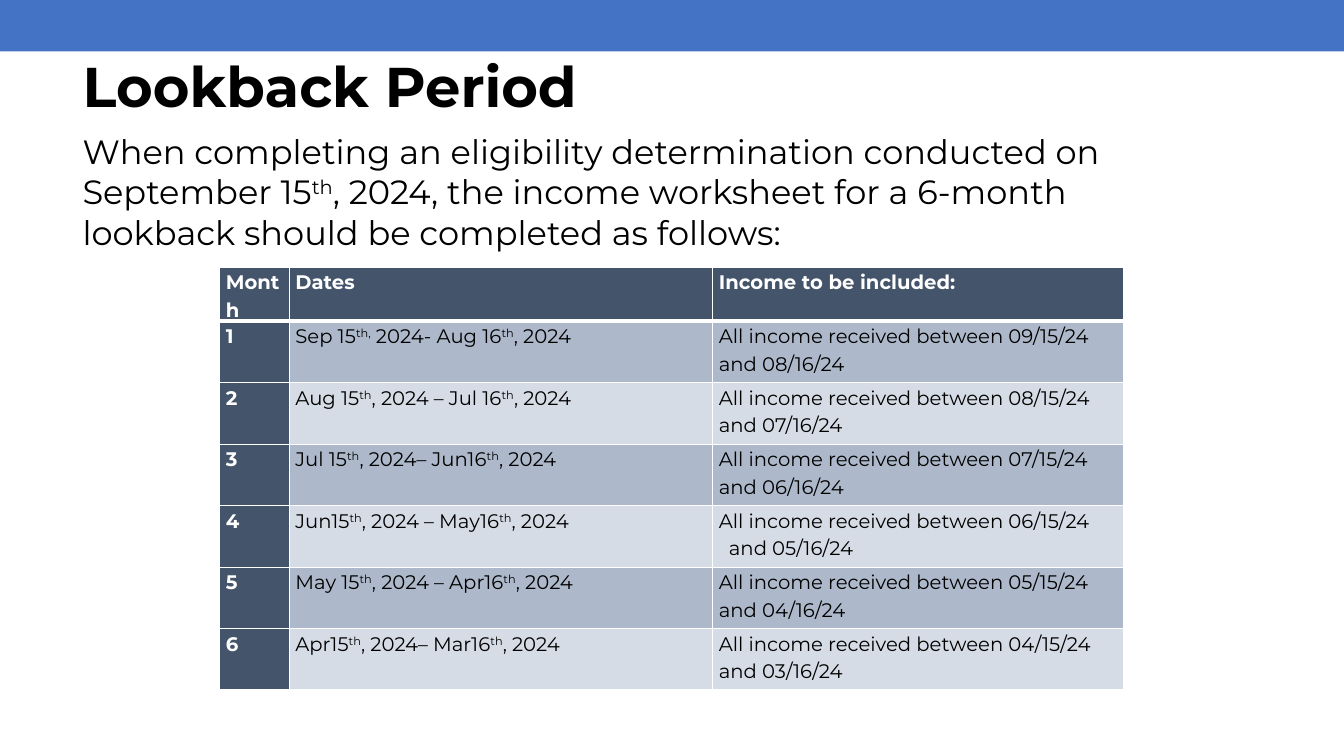
from typing import NamedTuple

from lxml.etree import SubElement
from pptx import Presentation
from pptx.dml.color import RGBColor
from pptx.enum.shapes import MSO_SHAPE
from pptx.enum.text import MSO_ANCHOR, MSO_AUTO_SIZE, PP_ALIGN
from pptx.oxml.ns import qn
from pptx.util import Inches, Pt

BLUE = RGBColor(0x44, 0x72, 0xC4)
SLATE = RGBColor(0x44, 0x54, 0x6A)
BANDS = (RGBColor(0xAD, 0xB9, 0xCA), RGBColor(0xD6, 0xDC, 0xE5))
WHITE = RGBColor(0xFF, 0xFF, 0xFF)
BLACK = RGBColor(0, 0, 0)
FONT = "Montserrat"
COL_WIDTHS = (0.69, 4.2, 4.07)
HEADER_HEIGHT, ROW_HEIGHT = 0.31, 0.61


class Month(NamedTuple):
    dates: str  # text between carets is superscript
    start: str
    end: str
    split: bool = False  # end date in its own indented paragraph


HEADERS = ("Month", "Dates", "Income to be included:")
MONTHS = (
    Month("Sep 15^th,^ 2024- Aug 16^th^, 2024", "09/15/24", "08/16/24"),
    Month("Aug 15^th^, 2024 – Jul 16^th^, 2024", "08/15/24", "07/16/24"),
    Month("Jul 15^th^, 2024– Jun16^th^, 2024", "07/15/24", "06/16/24"),
    Month("Jun15^th^, 2024 – May16^th^, 2024", "06/15/24", "05/16/24", True),
    Month("May 15^th^, 2024 – Apr16^th^, 2024", "05/15/24", "04/16/24"),
    Month("Apr15^th^, 2024– Mar16^th^, 2024", "04/15/24", "03/16/24"),
)


def write(tf, text: str, *, size: float, color: RGBColor = BLACK, bold: bool = False,
          spacing: float = 1.0, indent: float = 0) -> None:
    """Fill a text frame; later lines become paragraphs indented by `indent` inches."""
    for i, line in enumerate(text.split("\n")):
        p = tf.add_paragraph() if i else tf.paragraphs[0]
        p.alignment = PP_ALIGN.LEFT
        p.line_spacing = spacing
        if i and indent:
            p._p.get_or_add_pPr().set("marL", str(Inches(indent)))
        for j, part in enumerate(line.split("^")):
            r = p.add_run()
            r.text = part
            r.font.name, r.font.size, r.font.bold = FONT, Pt(size), bold
            r.font.color.rgb = color
            if j % 2:
                r._r.get_or_add_rPr().set("baseline", "30000")


def fill_cell(cell, text: str, fill: RGBColor, *, strong: bool, bottom: float = 1) -> None:
    tc_pr = cell._tc.get_or_add_tcPr()
    for side, width in (("L", 1), ("R", 1), ("T", 1), ("B", bottom)):
        ln = SubElement(tc_pr, qn(f"a:ln{side}"), w=str(Pt(width)))
        SubElement(SubElement(ln, qn("a:solidFill")), qn("a:srgbClr"), val=str(WHITE))
    cell.fill.solid()
    cell.fill.fore_color.rgb = fill
    cell.margin_left = cell.margin_right = Inches(0.06)
    cell.margin_top = cell.margin_bottom = 0
    write(cell.text_frame, text, size=14, color=WHITE if strong else BLACK,
          bold=strong, spacing=1.15, indent=0.1)


def add_months(s) -> None:
    height = HEADER_HEIGHT + ROW_HEIGHT * len(MONTHS)
    table = s.shapes.add_table(len(MONTHS) + 1, len(HEADERS), Inches(2.18), Inches(2.65),
                               Inches(sum(COL_WIDTHS)), Inches(height)).table
    for col, width in zip(table.columns, COL_WIDTHS):
        col.width = Inches(width)
    for i, row in enumerate(table.rows):
        row.height = Inches(ROW_HEIGHT if i else HEADER_HEIGHT)
    for c, header in enumerate(HEADERS):
        fill_cell(table.cell(0, c), header, SLATE, strong=True, bottom=3)
    for i, month in enumerate(MONTHS, 1):
        gap = "\n" if month.split else " "
        income = f"All income received between {month.start}{gap}and {month.end}"
        band = BANDS[(i - 1) % 2]
        fill_cell(table.cell(i, 0), str(i), SLATE, strong=True)
        fill_cell(table.cell(i, 1), month.dates, band, strong=False)
        fill_cell(table.cell(i, 2), income, band, strong=False)


def main() -> None:
    prs = Presentation()
    prs.slide_width, prs.slide_height = Inches(13.33), Inches(7.5)
    s = prs.slides.add_slide(prs.slide_layouts[5])

    # Top bar
    bar = s.shapes.add_shape(MSO_SHAPE.RECTANGLE, 0, Inches(-0.01), Inches(13.33), Inches(0.52))
    bar.shadow.inherit = False
    bar.fill.solid()
    bar.fill.fore_color.rgb = BLUE
    bar.line.fill.background()

    # Title
    title = s.shapes.title
    title.left, title.top = Inches(0.72), Inches(0.46)
    title.width, title.height = Inches(9.85), Inches(0.86)
    tf = title.text_frame
    tf.auto_size = MSO_AUTO_SIZE.NONE
    tf.vertical_anchor = MSO_ANCHOR.MIDDLE
    write(tf, "Lookback Period", size=40, bold=True, spacing=0.9)

    # Introduction
    intro = s.shapes.add_textbox(Inches(0.72), Inches(1.25), Inches(10.42), Inches(0.86))
    intro.text_frame.word_wrap = True
    write(intro.text_frame,
          "When completing an eligibility determination conducted on September 15^th^, 2024, "
          "the income worksheet for a 6-month lookback should be completed as follows:", size=24)

    # Lookback table
    add_months(s)
    prs.save("out.pptx")


if __name__ == "__main__":
    main()
